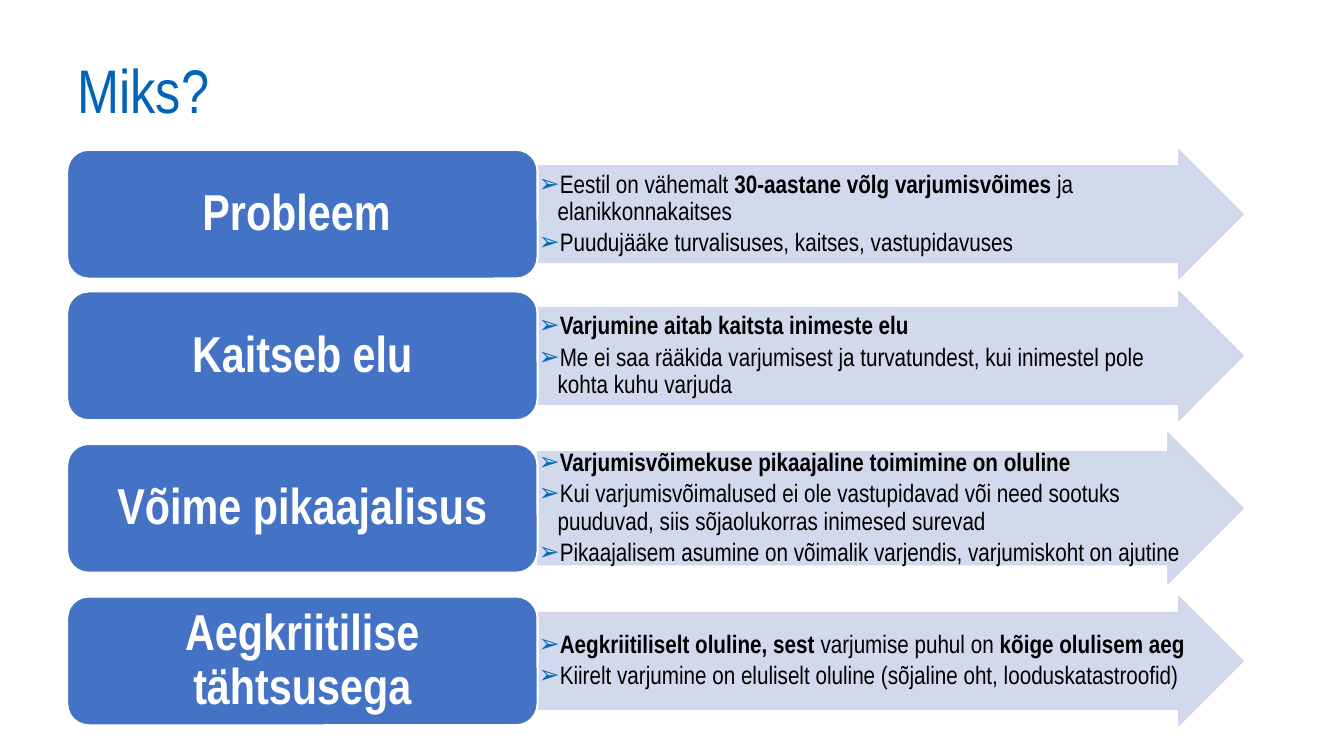
from lxml import etree
from pptx import Presentation
from pptx.dml.color import RGBColor
from pptx.enum.shapes import MSO_SHAPE
from pptx.enum.text import MSO_ANCHOR, PP_ALIGN
from pptx.oxml.ns import qn
from pptx.util import Pt

ARROW = MSO_SHAPE.RIGHT_ARROW
ROUND = MSO_SHAPE.ROUNDED_RECTANGLE
MIDDLE = MSO_ANCHOR.MIDDLE
LEFT, CENTER = PP_ALIGN.LEFT, PP_ALIGN.CENTER

TITLE = "Miks?"
ROWS = [
    ("Probleem ", 92, [
        [("Eestil on vähemalt ", False),
         ("30-aastane võlg varjumisvõimes ", True),
         ("ja elanikkonnakaitses", False)],
        [("Puudujääke turvalisuses, kaitses, vastupidavuses", False)],
    ]),
    ("Kaitseb elu", 92, [
        [("Varjumine aitab kaitsta inimeste elu", True)],
        [("Me ei saa rääkida varjumisest ja turvatundest, kui inimestel "
          "pole kohta kuhu varjuda", False)],
    ]),
    ("Võime pikaajalisus", 107.5, [
        [("Varjumisvõimekuse pikaajaline toimimine on oluline", True)],
        [("Kui varjumisvõimalused ei ole vastupidavad või need sootuks "
          "puuduvad, siis sõjaolukorras inimesed surevad", False)],
        [("Pikaajalisem asumine on võimalik varjendis, varjumiskoht on "
          "ajutine", False)],
    ]),
    ("Aegkriitilise tähtsusega", 92, [
        [("Aegkriitiliselt oluline, sest ", True),
         ("varjumise puhul on ", False),
         ("kõige olulisem aeg", True)],
        [("Kiirelt varjumine on eluliselt oluline (sõjaline oht, "
          "looduskatastroofid)", False)],
    ]),
]
NARROW = "Arial Narrow"
EDGE, TOP, GAP = 48, 107, 9.2
LABEL_W, LABEL_H, ARROW_W = 336, 92, 504


def color(code):
    return RGBColor.from_string(code)


def add_run(para, text, size, code, bold=False):
    run = para.add_run()
    run.text = text
    run.font.name = NARROW
    run.font.size = Pt(size)
    run.font.bold = bold
    run.font.color.rgb = color(code)


def set_frame(frame, side, top):
    frame.word_wrap = True
    frame.vertical_anchor = MIDDLE
    frame.margin_left = frame.margin_right = Pt(side)
    frame.margin_top = frame.margin_bottom = Pt(top)


def add_box(kind, x, y, w, h, fill, line, width):
    box = slide.shapes.add_shape(kind, Pt(x), Pt(y), Pt(w), Pt(h))
    box.shadow.inherit = False
    box.fill.solid()
    box.fill.fore_color.rgb = color(fill)
    box.line.color.rgb = color(line)
    box.line.width = Pt(width)
    return box


def fade(box, share):
    for tone in box._element.spPr.iter(qn("a:srgbClr")):
        etree.SubElement(tone, qn("a:alpha")).set("val", str(share * 1000))


def add_bullet(para, code):
    props = para._p.get_or_add_pPr()
    props.set("marL", str(Pt(13.5)))
    props.set("indent", str(Pt(-13.5)))
    tint = etree.SubElement(props, qn("a:buClr"))
    etree.SubElement(tint, qn("a:srgbClr")).set("val", code)
    etree.SubElement(props, qn("a:buFont")).set("typeface", "Arial")
    etree.SubElement(props, qn("a:buChar")).set("char", "➢")


def add_arrow(y, h, points):
    box = add_box(ARROW, EDGE + LABEL_W, y, ARROW_W, h, "CFD5EA", "CFD5EA", 1)
    box.adjustments[0] = 0.75
    box.adjustments[1] = 0.5
    fade(box, 90)
    frame = box.text_frame
    set_frame(frame, 0.8, 0.8)
    for i, runs in enumerate(points):
        para = frame.paragraphs[0] if i == 0 else frame.add_paragraph()
        para.alignment = LEFT
        para.line_spacing = 0.9
        para.space_after = Pt(3)
        add_bullet(para, "006EB5")
        for text, bold in runs:
            add_run(para, text, 18, "000000", bold)


def add_label(y, text):
    box = add_box(ROUND, EDGE, y, LABEL_W, LABEL_H, "4472C4", "FFFFFF", 1.5)
    set_frame(box.text_frame, 10.8, 5.4)
    para = box.text_frame.paragraphs[0]
    para.alignment = CENTER
    para.line_spacing = 0.9
    add_run(para, text, 36, "FFFFFF", True)


deck = Presentation()
deck.slide_width, deck.slide_height = Pt(960), Pt(540)
slide = deck.slides.add_slide(deck.slide_layouts[5])

title = slide.shapes.title
title.left, title.top, title.width, title.height = Pt(48), Pt(21.6), Pt(837), Pt(90)
set_frame(title.text_frame, 7.2, 3.6)
head = title.text_frame.paragraphs[0]
head.alignment = LEFT
head.line_spacing = 0.9
add_run(head, TITLE, 44, "0064B9")

y = TOP
for label, h, points in ROWS:
    add_arrow(y, h, points)
    add_label(y + (h - LABEL_H) / 2, label)
    y += h + GAP

deck.save("out.pptx")
